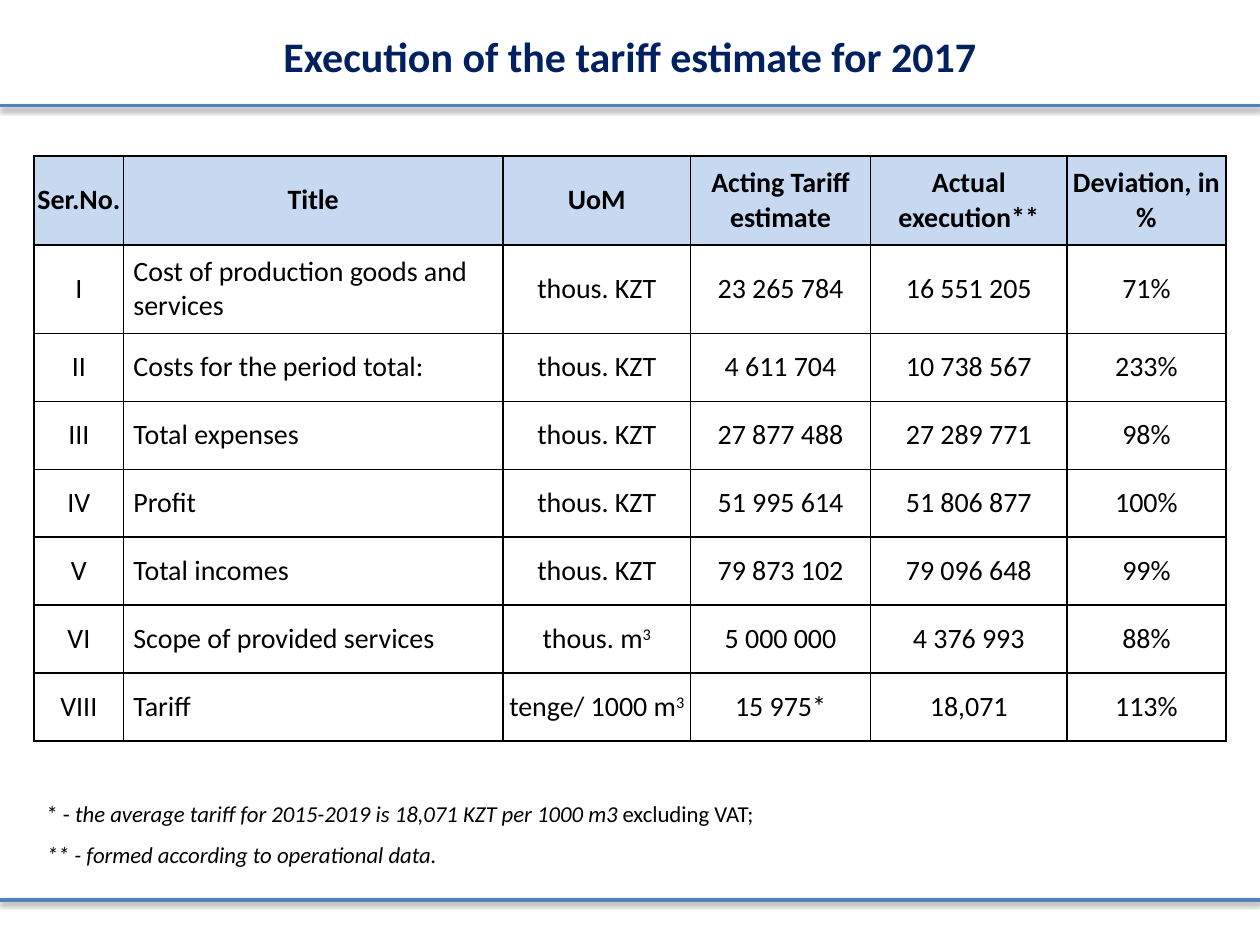
from lxml import etree
from pptx import Presentation
from pptx import util as u
from pptx.dml.color import RGBColor
from pptx.enum import shapes, text
from pptx.oxml import ns

# Content; "^" starts a superscript
TITLE = "Execution of the tariff estimate for 2017"
HEADERS = ["Ser.No.", "Title", "UoM", "Acting Tariff estimate",
           "Actual execution**", "Deviation, in %"]
ESTIMATE = [
    ("I", "Cost of production goods and services", "thous. KZT", "23 265 784", "16 551 205", "71%"),
    ("II", "Costs for the period total:", "thous. KZT", "4 611 704", "10 738 567", "233%"),
    ("III", "Total expenses", "thous. KZT", "27 877 488", "27 289 771", "98%"),
    ("IV", "Profit", "thous. KZT", "51 995 614", "51 806 877", "100%"),
    ("V", "Total incomes", "thous. KZT", "79 873 102", "79 096 648", "99%"),
    ("VI", "Scope of provided services", "thous. m^3", "5 000 000", "4 376 993", "88%"),
    ("VIII", "Tariff", "tenge/ 1000 m^3", "15 975*", "18,071", "113%"),
]
# Each footnote is a list of (words, italic)
FOOTNOTES = [
    [("* - ", False),
     ("the average tariff for 2015-2019 is 18,071 KZT per 1000 m3 ", True),
     ("excluding VAT;", False)],
    [("** - formed according to operational data.", True)],
]

# Layout in centimetres
SLIDE_W, SLIDE_H = 25.4, 19.05
RULE_TOPS = [2.13, 18.14]
COLUMN_WIDTHS = [1.8, 7.65, 3.78, 3.63, 3.96, 3.2]
ROW_HEIGHTS = [1.8, 1.78] + [1.37] * 6
TITLE_COLUMN = 1

NAVY, BLUE, PALE, BLACK = "002060", "4F81BD", "C6D9F1", "000000"
TITLE_FONT = {"name": "Calibri", "size": u.Pt(24), "bold": True}
HEADER_FONT = {"name": "Calibri", "size": u.Pt(16), "bold": True}
CELL_FONT = {**HEADER_FONT, "bold": False}
NOTE_FONT = {"name": "Calibri", "size": u.Pt(13)}


def paint(color_format, hex_color):
    color_format.rgb = RGBColor.from_string(hex_color)


def apply(target, values):
    for name, value in values.items():
        setattr(target, name, value)


def add_run(paragraph, words, font, color=BLACK):
    run = paragraph.add_run()
    run.text = words
    apply(run.font, font)
    paint(run.font.color, color)
    return run


def child(parent, tag, **attributes):
    return etree.SubElement(parent, ns.qn(tag), attributes)


def add_rule(slide, top):
    rule = slide.shapes.add_connector(
        shapes.MSO_CONNECTOR.STRAIGHT, 0, u.Cm(top), u.Cm(SLIDE_W), u.Cm(top))
    rule.line.width = u.Pt(2)
    paint(rule.line.color, BLUE)
    effects = child(rule._element.spPr, "a:effectLst")
    shadow = child(effects, "a:outerShdw", blurRad=str(u.Pt(3.1)),
                   dist=str(u.Pt(1.6)), dir="5400000", rotWithShape="0")
    child(child(shadow, "a:srgbClr", val=BLACK), "a:alpha", val="38000")


def add_borders(cell):
    properties = cell._tc.get_or_add_tcPr()
    for position, side in enumerate(("a:lnL", "a:lnR", "a:lnT", "a:lnB")):
        border = etree.Element(ns.qn(side), w=str(u.Pt(1)))
        child(child(border, "a:solidFill"), "a:srgbClr", val=BLACK)
        properties.insert(position, border)


def fill_cell(cell, words, is_header, is_title):
    left_aligned = is_title and not is_header
    apply(cell, {"margin_left": u.Cm(0.2 if left_aligned else 0), "margin_right": 0,
                 "margin_top": 0, "margin_bottom": 0,
                 "vertical_anchor": text.MSO_ANCHOR.MIDDLE})
    if is_header:
        cell.fill.solid()
        paint(cell.fill.fore_color, PALE)
    else:
        cell.fill.background()
    add_borders(cell)
    paragraph = cell.text_frame.paragraphs[0]
    paragraph.alignment = text.PP_ALIGN.LEFT if left_aligned else text.PP_ALIGN.CENTER
    font = HEADER_FONT if is_header else CELL_FONT
    base, _, power = words.partition("^")
    add_run(paragraph, base, font)
    if power:
        add_run(paragraph, power, font).font._element.set("baseline", "30000")


def main():
    deck = Presentation()
    deck.slide_width, deck.slide_height = u.Cm(SLIDE_W), u.Cm(SLIDE_H)
    slide = deck.slides.add_slide(deck.slide_layouts[5])

    # Title
    heading = slide.shapes.title
    apply(heading, {"left": 0, "top": u.Cm(0.23),
                    "width": u.Cm(SLIDE_W), "height": u.Cm(1.8)})
    heading.text_frame.vertical_anchor = text.MSO_ANCHOR.MIDDLE
    heading_line = heading.text_frame.paragraphs[0]
    heading_line.alignment = text.PP_ALIGN.CENTER
    add_run(heading_line, TITLE, TITLE_FONT, NAVY)

    # Rules above and below the content
    for top in RULE_TOPS:
        add_rule(slide, top)

    # Tariff estimate
    rows = [HEADERS] + ESTIMATE
    estimate = slide.shapes.add_table(
        len(rows), len(HEADERS), u.Cm(0.69), u.Cm(3.14),
        u.Cm(sum(COLUMN_WIDTHS)), u.Cm(sum(ROW_HEIGHTS))).table
    estimate.horz_banding = False
    for column, width in zip(estimate.columns, COLUMN_WIDTHS):
        column.width = u.Cm(width)
    for r, (row, height) in enumerate(zip(rows, ROW_HEIGHTS)):
        estimate.rows[r].height = u.Cm(height)
        for c, words in enumerate(row):
            fill_cell(estimate.cell(r, c), words, r == 0, c == TITLE_COLUMN)

    # Footnotes
    notes = slide.shapes.add_textbox(
        u.Cm(0.69), u.Cm(15.72), u.Cm(24.2), u.Cm(1.52)).text_frame
    notes.word_wrap = True
    for i, footnote in enumerate(FOOTNOTES):
        paragraph = notes.add_paragraph() if i else notes.paragraphs[0]
        apply(paragraph, {"alignment": text.PP_ALIGN.JUSTIFY, "line_spacing": 1.5})
        for words, italic in footnote:
            add_run(paragraph, words, {**NOTE_FONT, "italic": italic})

    deck.save("out.pptx")


if __name__ == "__main__":
    main()
